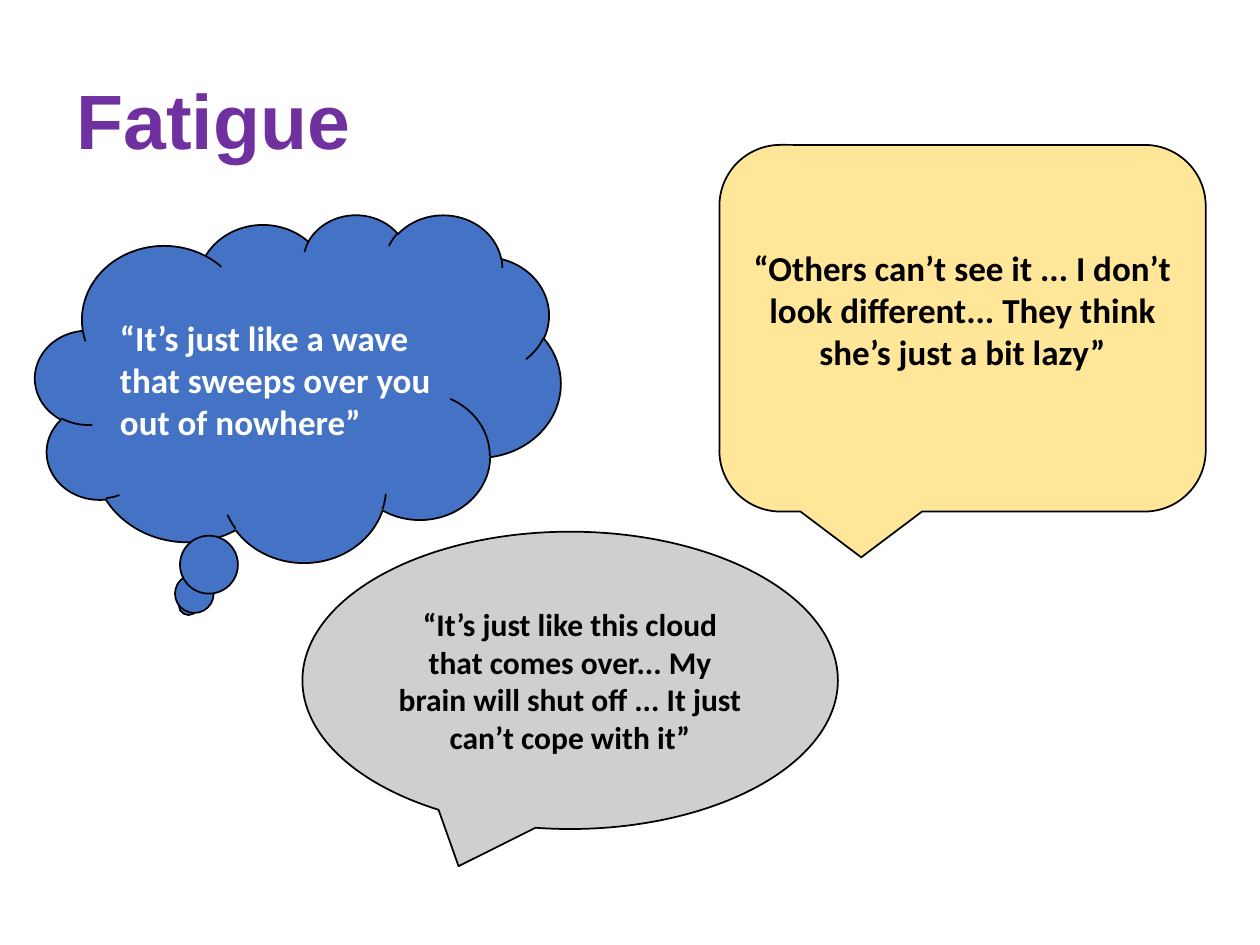
from dataclasses import dataclass

from pptx import Presentation
from pptx.dml.color import RGBColor
from pptx.enum.shapes import MSO_SHAPE
from pptx.enum.text import MSO_ANCHOR, PP_ALIGN
from pptx.util import Inches, Pt

PURPLE = RGBColor(0x70, 0x30, 0xA0)
BLUE = RGBColor(0x44, 0x72, 0xC4)
YELLOW = RGBColor(0xFF, 0xE6, 0x99)
GREY = RGBColor(0xD0, 0xCE, 0xCE)
BLACK = RGBColor(0, 0, 0)
WHITE = RGBColor(0xFF, 0xFF, 0xFF)


@dataclass(frozen=True)
class Quote:
    text: str
    outline: MSO_SHAPE
    left: float
    top: float
    width: float
    height: float
    fill: RGBColor
    color: RGBColor = BLACK
    size: int = 20
    align: PP_ALIGN = PP_ALIGN.CENTER
    bottom_inset: float = 0.05


QUOTES = [
    Quote("“It’s just like a wave that sweeps over you out of nowhere”",
          MSO_SHAPE.CLOUD_CALLOUT, 0.28, 1.7, 4.17, 2.76, BLUE,
          color=WHITE, align=PP_ALIGN.LEFT),
    Quote("“Others can’t see it ... I don’t look different... They think she’s just a bit lazy”",
          MSO_SHAPE.ROUNDED_RECTANGULAR_CALLOUT, 5.71, 1.15, 3.86, 2.91, YELLOW,
          bottom_inset=0.35),
    Quote("“It’s just like this cloud that comes over... My brain will shut off ... "
          "It just can’t cope with it”",
          MSO_SHAPE.OVAL_CALLOUT, 2.4, 4.22, 4.25, 2.36, GREY, size=18),
]


def write_text(box, text: str, *, font: str, size: int, color: RGBColor,
               align: PP_ALIGN = PP_ALIGN.LEFT, line_spacing: float = 1.0,
               bottom_inset: float = 0.05) -> None:
    frame = box.text_frame
    frame.word_wrap = True
    frame.vertical_anchor = MSO_ANCHOR.MIDDLE
    frame.margin_bottom = Inches(bottom_inset)
    para = frame.paragraphs[0]
    para.alignment = align
    para.line_spacing = line_spacing
    span = para.add_run()
    span.text = text
    span.font.name = font
    span.font.size = Pt(size)
    span.font.bold = True
    span.font.color.rgb = color


def draw_quote(page, quote: Quote) -> None:
    bubble = page.shapes.add_shape(quote.outline, Inches(quote.left), Inches(quote.top),
                                   Inches(quote.width), Inches(quote.height))
    bubble.shadow.inherit = False
    bubble.fill.solid()
    bubble.fill.fore_color.rgb = quote.fill
    bubble.line.color.rgb = BLACK
    bubble.line.width = Pt(1)
    write_text(bubble, quote.text, font="Calibri", size=quote.size, color=quote.color,
               align=quote.align, bottom_inset=quote.bottom_inset)


def main() -> None:
    deck = Presentation()
    deck.slide_width = Inches(10)
    deck.slide_height = Inches(7.5)
    page = deck.slides.add_slide(deck.slide_layouts[6])
    title = page.shapes.add_textbox(Inches(0.51), Inches(0.36), Inches(9), Inches(1.25))
    write_text(title, "Fatigue", font="Arial", size=44, color=PURPLE, line_spacing=0.9)
    for quote in QUOTES:
        draw_quote(page, quote)
    deck.save("out.pptx")


if __name__ == "__main__":
    main()
